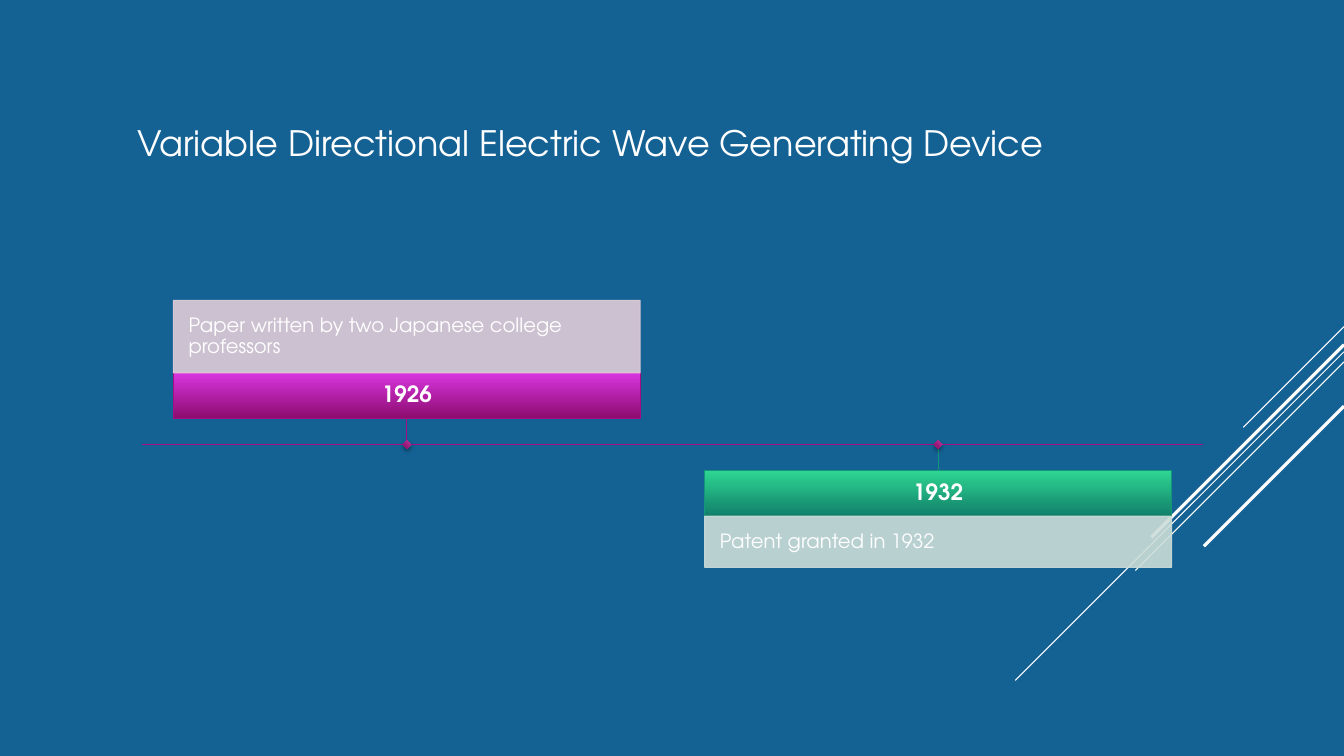
from lxml.etree import SubElement
from pptx import Presentation
from pptx.dml.color import RGBColor
from pptx.enum.shapes import MSO_CONNECTOR as Connector, MSO_SHAPE as Shape
from pptx.enum.text import MSO_ANCHOR as Anchor, MSO_AUTO_SIZE as AutoSize, PP_ALIGN as Align
from pptx.oxml.ns import qn
from pptx.util import Inches, Pt

FONT = "TeX Gyre Adventor"
COLORS = {
    "background": "146194", "white": "FFFFFF", "shadow": "000000",
    "magenta": "A50E82", "magenta_top": "D835DF", "magenta_bottom": "8D0C6F", "magenta_pale": "E1CCD8",
    "green": "14967C", "green_top": "2ED592", "green_bottom": "11806A", "green_pale": "CCDDD8",
    "marker_top": "BF3699", "marker_bottom": "840B68",
}

# Timeline geometry in inches
AXIS_Y, AXIS_LEFT, AXIS_RIGHT = 4.41, 1.41, 11.93
CARD_WIDTH, BAR_HEIGHT, STEM, MARKER = 4.63, 0.45, 0.26, 0.06

# Decorative rays at 45 degrees: top on the right edge, length across, weight
RAYS = [(3.24, 1.0, 0.75), (3.49, 3.26, 0.75), (3.59, 2.07, 0.75),
        (3.42, 1.91, 2.25), (4.03, 1.39, 2.25)]

# Events: left, above the axis, colour family, year, description, description height
EVENTS = [
    (1.72, True, "magenta", "1926", "Paper written by two Japanese college professors", 0.72),
    (6.99, False, "green", "1932", "Patent granted in 1932", 0.51),
]


def color(name):
    return RGBColor.from_string(COLORS[name])


def add_line(page, start, end, name, weight=0.75):
    line = page.shapes.add_connector(Connector.STRAIGHT, *map(Inches, start + end))
    line.line.color.rgb = color(name)
    line.line.width = Pt(weight)
    SubElement(line._element.spPr, qn("a:effectLst"))
    return line


def add_rectangle(page, left, top, width, height):
    box = page.shapes.add_shape(Shape.RECTANGLE, *map(Inches, (left, top, width, height)))
    box.shadow.inherit = False
    return box


def set_gradient(box, top_name, bottom_name):
    box.fill.gradient()
    box.fill.gradient_angle = 270
    for stop, position, name in zip(box.fill.gradient_stops, (0, 1), (top_name, bottom_name)):
        stop.position = position
        stop.color.rgb = color(name)


def set_outline(box, name):
    box.line.color.rgb = color(name)
    box.line.width = Pt(0.75)


def set_alpha(box, percent):
    for fill in box._element.spPr.iter(qn("a:solidFill")):
        SubElement(fill[0], qn("a:alpha"), val=str(percent * 1000))


def write(box, text, size, align=Align.LEFT, bold=False, inset=None):
    frame = box.text_frame
    frame.word_wrap = True
    frame.auto_size = AutoSize.NONE
    frame.vertical_anchor = Anchor.MIDDLE
    if inset is not None:
        frame.margin_left = frame.margin_right = Inches(inset)
        frame.margin_top = frame.margin_bottom = Inches(inset)
    para = frame.paragraphs[0]
    para.alignment = align
    para.line_spacing = 0.9
    span = para.add_run()
    span.text = text
    span.font.name = FONT
    span.font.size = Pt(size)
    span.font.bold = bold
    span.font.color.rgb = color("white")


def add_title(page, text):
    title = page.shapes.title
    title.left, title.top, title.width, title.height = map(Inches, (1.26, 1.04, 9.58, 0.8))
    write(title, text, 25)


def add_event(page, left, above, family, year, description, height):
    bar_top = AXIS_Y - STEM - BAR_HEIGHT if above else AXIS_Y + STEM
    text_top = bar_top - height if above else bar_top + BAR_HEIGHT

    # Year bar
    bar = add_rectangle(page, left, bar_top, CARD_WIDTH, BAR_HEIGHT)
    set_gradient(bar, f"{family}_top", f"{family}_bottom")
    set_outline(bar, family)
    write(bar, year, 16, Align.CENTER, bold=True, inset=0.09)

    # Description
    panel = add_rectangle(page, left, text_top, CARD_WIDTH, height)
    panel.fill.solid()
    panel.fill.fore_color.rgb = color(f"{family}_pale")
    set_outline(panel, f"{family}_pale")
    set_alpha(panel, 90)
    write(panel, description, 14, inset=0.15)

    # Stem from the bar to the axis
    center = left + CARD_WIDTH / 2
    bar_edge = bar_top + BAR_HEIGHT if above else bar_top
    stem = add_line(page, (center, bar_edge), (center, AXIS_Y), family)
    stem.begin_connect(bar, 2 if above else 0)


def add_marker(page, center):
    marker = add_rectangle(page, center - MARKER / 2, AXIS_Y - MARKER / 2, MARKER, MARKER)
    marker.rotation = 45
    set_gradient(marker, "marker_top", "marker_bottom")
    marker.line.fill.background()
    effects = marker._element.spPr.find(qn("a:effectLst"))
    shadow = SubElement(effects, qn("a:outerShdw"), blurRad=str(Pt(3)), dist=str(Pt(2)),
                        dir="5400000", rotWithShape="0")
    tint = SubElement(shadow, qn("a:srgbClr"), val=COLORS["shadow"])
    SubElement(tint, qn("a:alpha"), val="45000")


def main():
    deck = Presentation()
    deck.slide_width, deck.slide_height = Inches(13.33), Inches(7.5)
    page = deck.slides.add_slide(deck.slide_layouts[5])
    page.background.fill.solid()
    page.background.fill.fore_color.rgb = color("background")

    # Rays at the right edge
    for top, length, weight in RAYS:
        add_line(page, (13.33, top), (13.33 - length, top + length), "white", weight)

    add_title(page, "Variable Directional Electric Wave Generating Device")

    # Timeline
    add_line(page, (AXIS_LEFT, AXIS_Y), (AXIS_RIGHT, AXIS_Y), "magenta")
    for event in EVENTS:
        add_event(page, *event)
    for left, *_ in EVENTS:
        add_marker(page, left + CARD_WIDTH / 2)

    deck.save("out.pptx")


if __name__ == "__main__":
    main()
